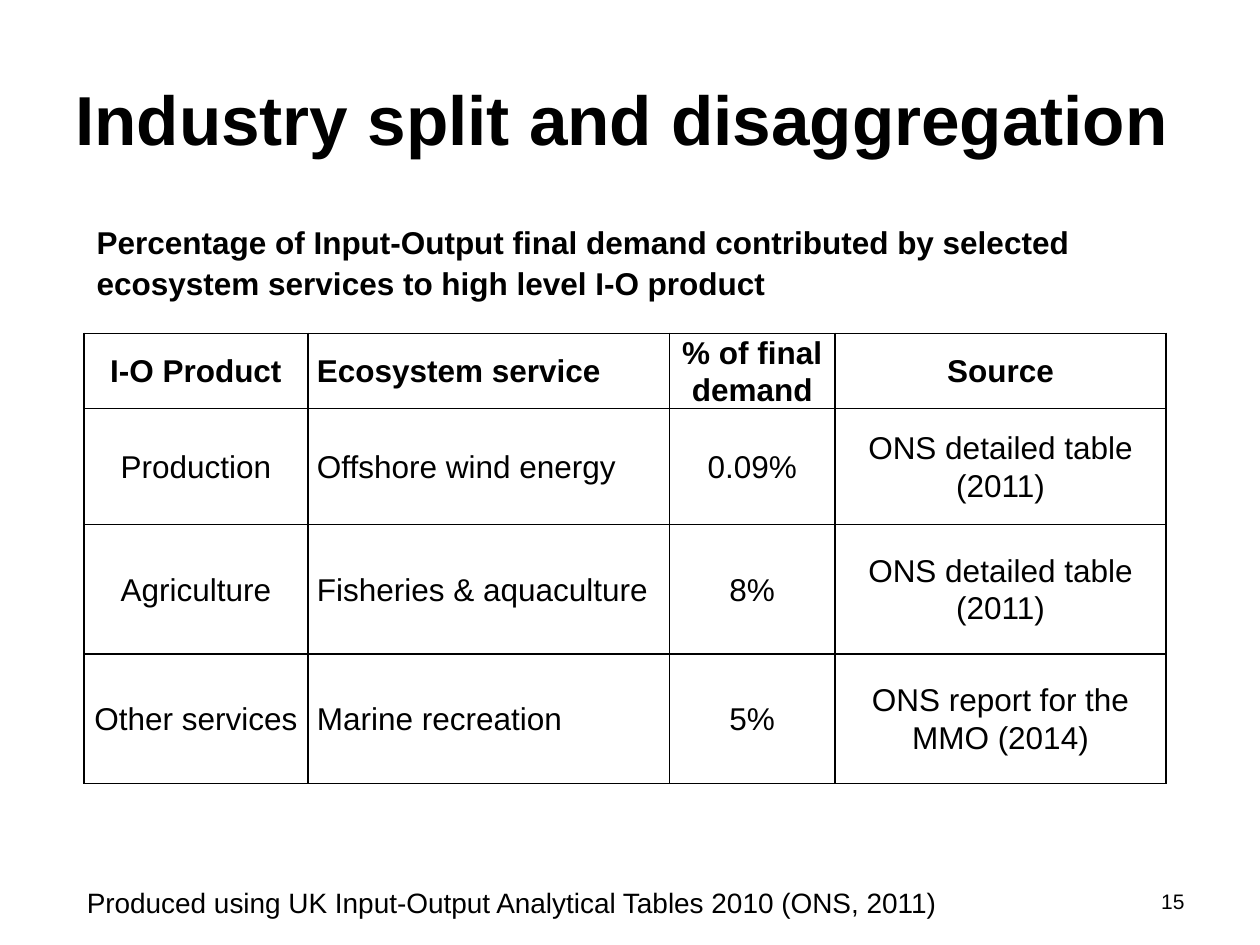
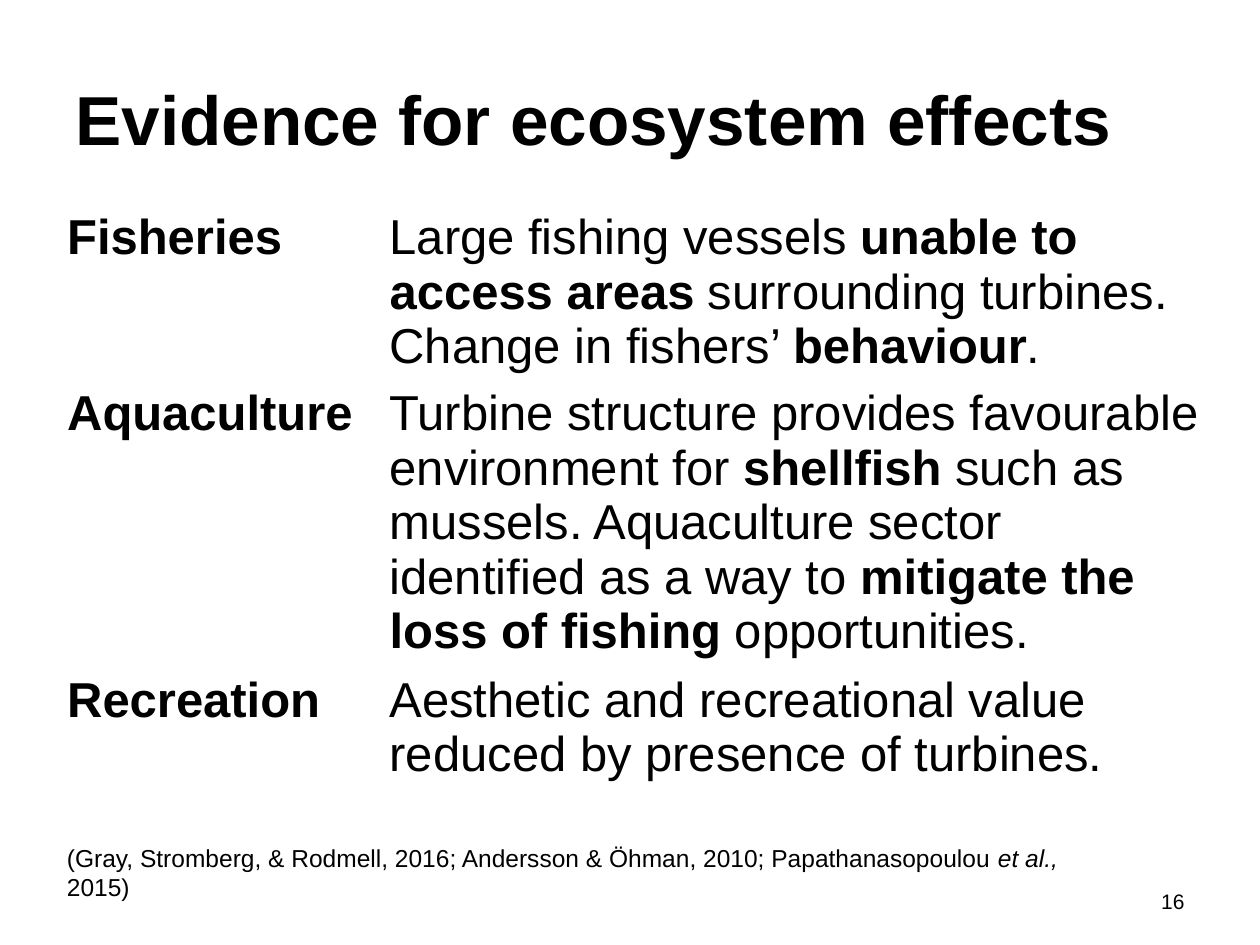
"""Build two slides on ecosystem services: an industry split table and evidence of effects."""
from lxml import etree
from pptx import Presentation
from pptx.dml.color import RGBColor
from pptx.enum.text import MSO_ANCHOR, PP_ALIGN
from pptx.oxml.ns import qn
from pptx.util import Cm, Pt

LEFT, CENTER, RIGHT = PP_ALIGN.LEFT, PP_ALIGN.CENTER, PP_ALIGN.RIGHT
TOP, MIDDLE = MSO_ANCHOR.TOP, MSO_ANCHOR.MIDDLE
FONT, INK = "Arial", "000000"
PLAIN_TABLE_STYLE = "{2D5ABB26-0587-4C30-8999-92F81FD0307C}"


def write(frame, pieces, size, bold=False, align=LEFT, spacing=None, after=0, accent="bold"):
    """Fill a frame with one paragraph whose every second piece carries the accent."""
    line = frame.paragraphs[0]
    line.alignment = align
    line.space_after = Pt(after)
    if spacing:
        line.line_spacing = spacing
    line.font.name, line.font.size, line.font.bold = FONT, Pt(size), bold
    line.font.color.rgb = RGBColor.from_string(INK)
    for index, piece in enumerate(pieces):
        run = line.add_run()
        run.text = piece
        if index % 2:
            setattr(run.font, accent, True)


def add_plain_table(slide, left, top, widths, heights):
    """Add a table without style, bands or fills."""
    table = slide.shapes.add_table(len(heights), len(widths), Cm(left), Cm(top),
                                   Cm(sum(widths)), Cm(sum(heights))).table
    table.first_row = table.horz_banding = False
    table._tbl.tblPr.find(qn("a:tableStyleId")).text = PLAIN_TABLE_STYLE
    for column, width in zip(table.columns, widths):
        column.width = Cm(width)
    for row, height in zip(table.rows, heights):
        row.height = Cm(height)
    for cell in table.iter_cells():
        cell.fill.background()
    return table


prs = Presentation()
prs.slide_width, prs.slide_height = Cm(25.4), Cm(19.05)
split, evidence = [prs.slides.add_slide(prs.slide_layouts[6]) for _ in range(2)]

title_style = dict(size=39.6, bold=True)
number_style = dict(size=12, align=RIGHT)
title_area, number_area = (1.27, 1.68, 22.86, 1.4), (18.21, 17.65, 5.92, 1.02)
texts = [
    (split, title_area, MIDDLE, ["Industry split and disaggregation"], title_style),
    (split, number_area, MIDDLE, ["15"], number_style),
    (split, (1.7, 4.32, 21.79, 1.9), TOP,
     ["Percentage of Input-Output final demand contributed by selected "
      "ecosystem services to high level I-O product"],
     dict(size=18, bold=True, spacing=1.07, after=8)),
    (split, (1.5, 17.73, 18.06, 0.94), TOP,
     ["Produced using UK Input-Output Analytical Tables 2010 (ONS, 2011)"], dict(size=16)),
    (evidence, title_area, MIDDLE, ["Evidence for ecosystem effects"], title_style),
    (evidence, number_area, MIDDLE, ["16"], number_style),
    (evidence, (1.1, 16.87, 21.79, 0.86), TOP,
     ["(Gray, Stromberg, & Rodmell, 2016; Andersson & Öhman, 2010; Papathanasopoulou ",
      "et al., ", "2015)"], dict(size=14, accent="italic")),
]
for slide, area, anchor, pieces, style in texts:
    frame = slide.shapes.add_textbox(*map(Cm, area)).text_frame
    frame.word_wrap = True
    frame.vertical_anchor = anchor
    write(frame, pieces, **style)

demand_rows = [
    ("I-O Product", "Ecosystem service", "% of final demand", "Source"),
    ("Production", "Offshore wind energy", "0.09%", "ONS detailed table (2011)"),
    ("Agriculture", "Fisheries & aquaculture", "8%", "ONS detailed table (2011)"),
    ("Other services", "Marine recreation", "5%", "ONS report for the MMO (2014)"),
]
demand = add_plain_table(split, 1.69, 6.72, [4.52, 7.29, 3.33, 6.68], [1.51, 2.34, 2.61, 2.61])
for r, row in enumerate(demand_rows):
    for c, entry in enumerate(row):
        cell = demand.cell(r, c)
        cell.vertical_anchor = MIDDLE
        cell.margin_left = cell.margin_right = Cm(0.18)
        cell.margin_top = cell.margin_bottom = 0
        write(cell.text_frame, [entry], 18, bold=r == 0, align=LEFT if c == 1 else CENTER,
              spacing=Pt(21.4))
        properties = cell._tc.get_or_add_tcPr()
        for position, side in enumerate(("a:lnL", "a:lnR", "a:lnT", "a:lnB")):
            border = etree.Element(qn(side), w=str(Pt(1)))
            ink = etree.SubElement(border, qn("a:solidFill"))
            etree.SubElement(ink, qn("a:srgbClr"), val=INK)
            properties.insert(position, border)

effects = [
    ("Fisheries", ["Large fishing vessels ", "unable to access areas",
                   " surrounding turbines. Change in fishers’ ", "behaviour", "."]),
    ("Aquaculture", ["Turbine structure provides favourable environment for ", "shellfish",
                     " such as mussels. Aquaculture sector identified as a way to ",
                     "mitigate the loss of fishing ", "opportunities."]),
    ("Recreation", ["Aesthetic and recreational value reduced by presence of turbines."]),
]
effect_table = add_plain_table(evidence, 1.1, 4.12, [6.5, 16.92], [3.55, 5.77, 2.79])
for r, (sector, finding) in enumerate(effects):
    write(effect_table.cell(r, 0).text_frame, [sector], 28, bold=True, spacing=Pt(31.1))
    write(effect_table.cell(r, 1).text_frame, finding, 28, spacing=Pt(31.1))

prs.save("out.pptx")
